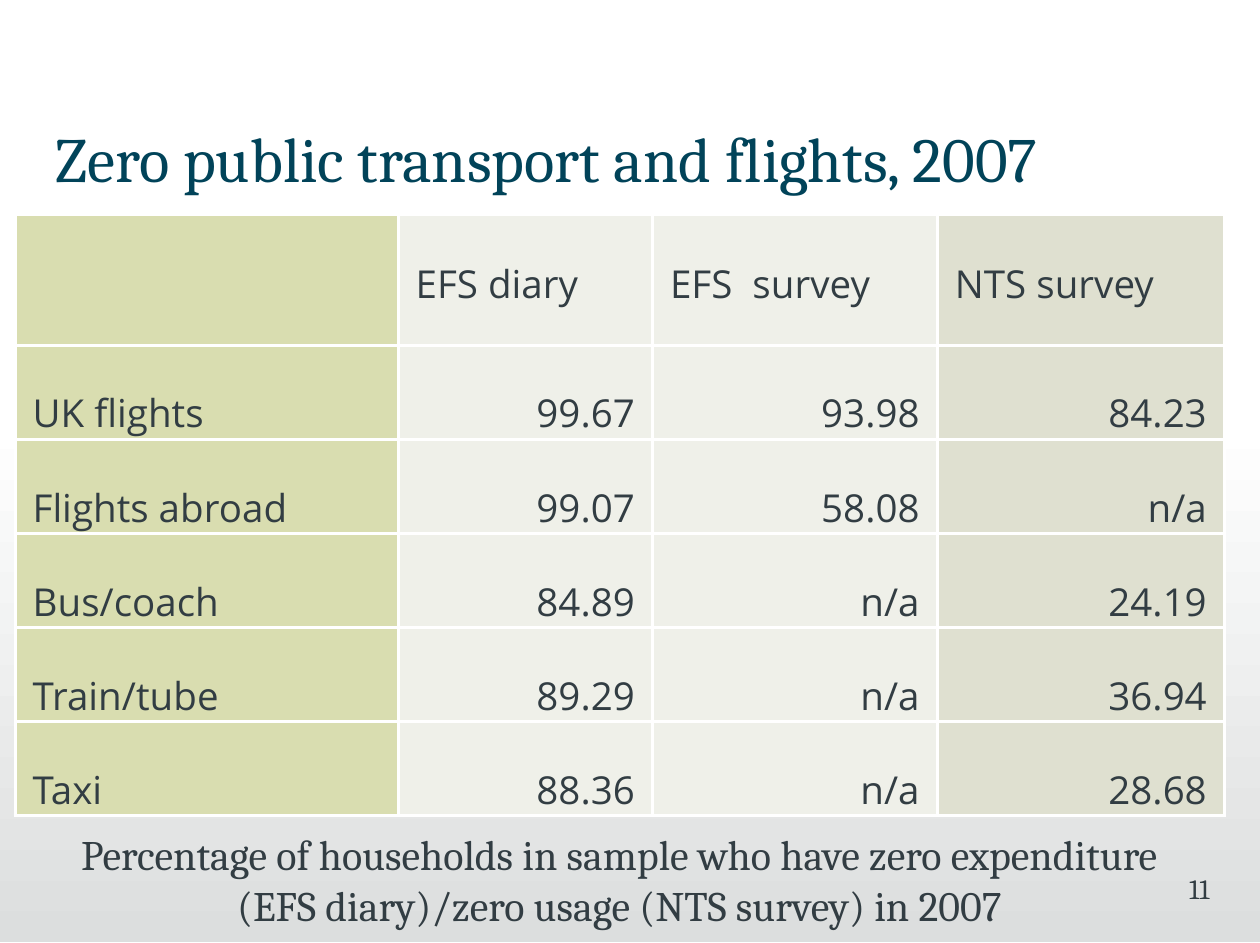
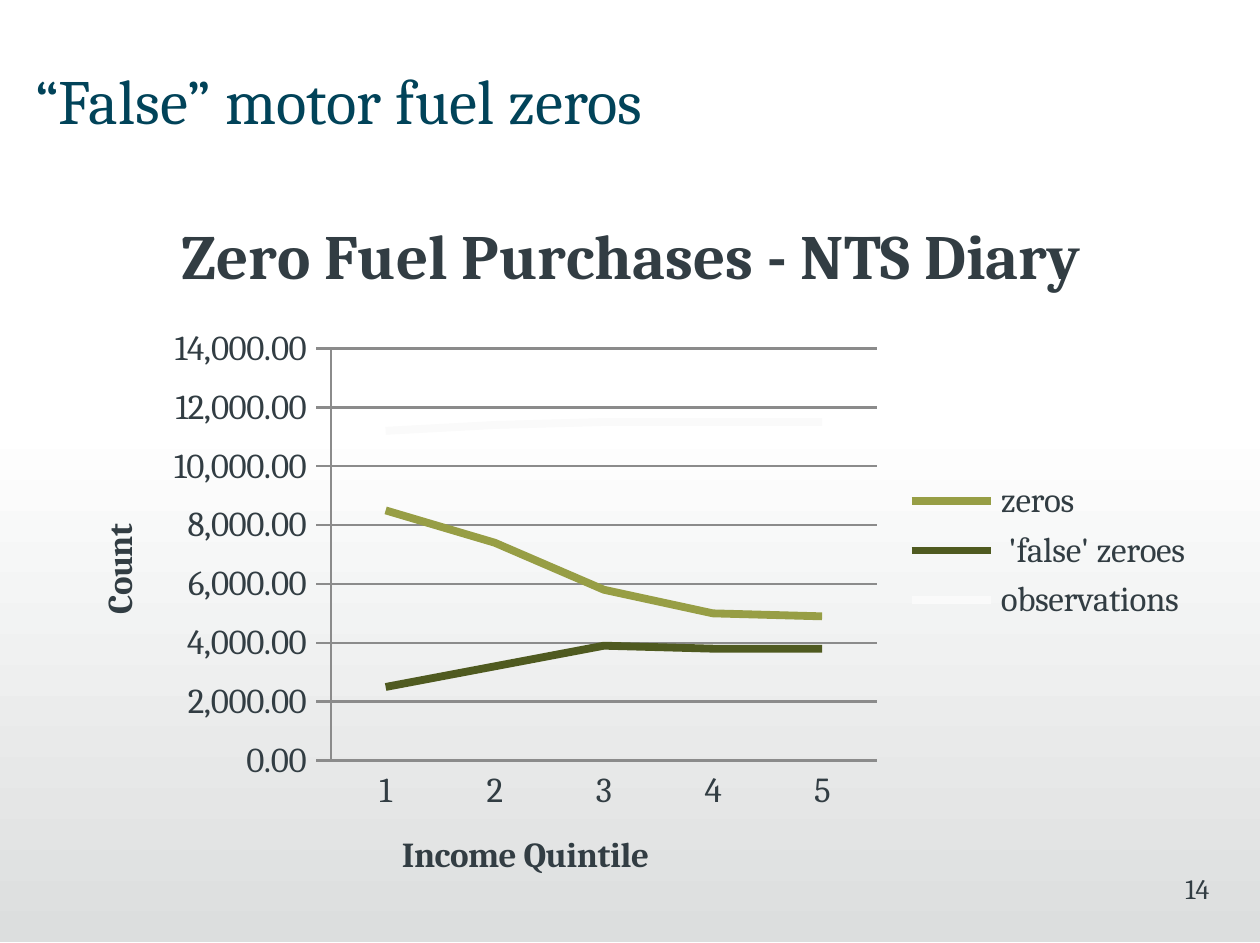
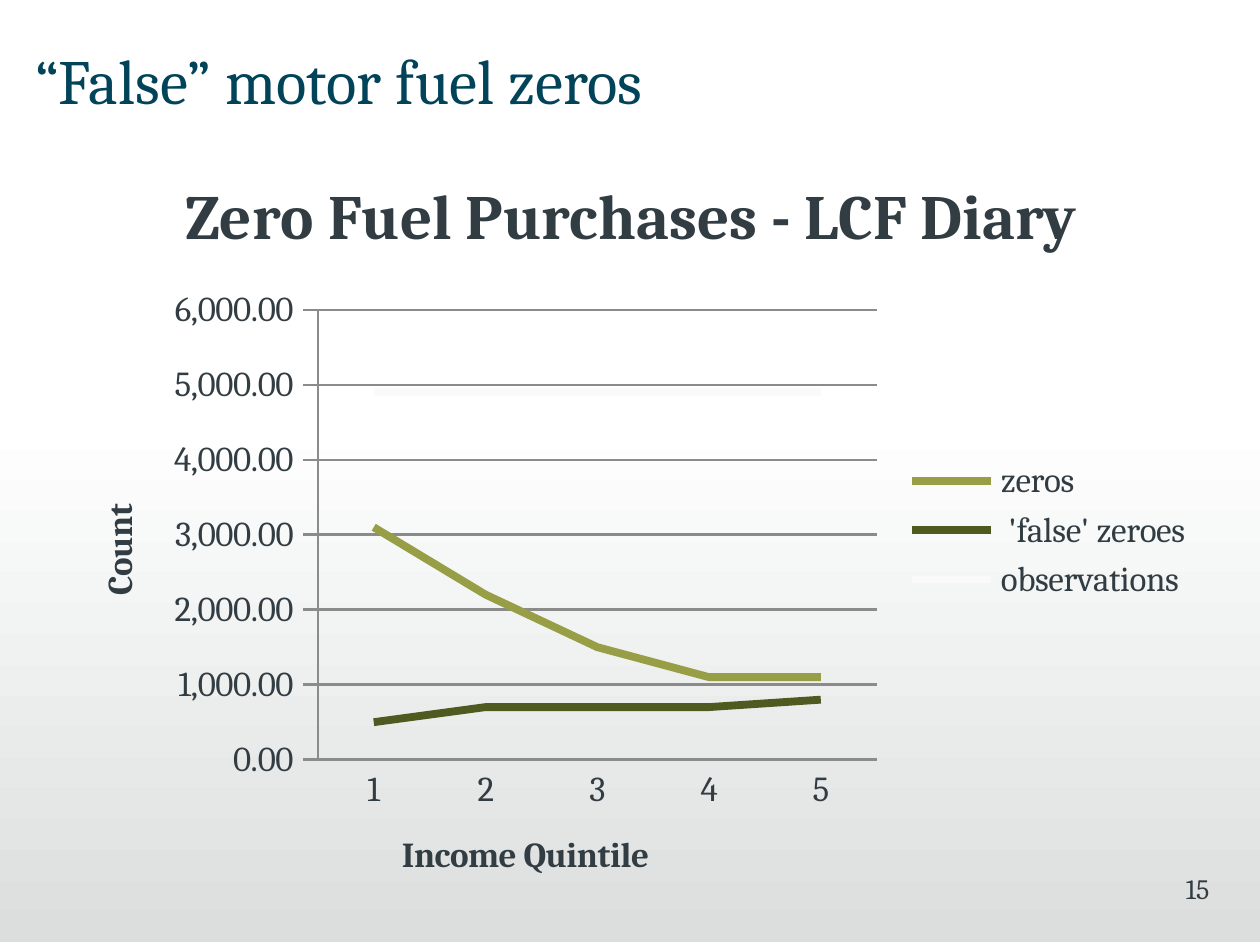
"""Build three slides on zero expenditure in travel surveys."""
from dataclasses import dataclass
from typing import Any, NamedTuple

import pptx
import pptx.chart.data
import pptx.dml.color
import pptx.enum.chart
import pptx.enum.shapes
import pptx.enum.text
import pptx.oxml
import pptx.oxml.ns
import pptx.util
from pptx.util import Inches, Pt

RGB = pptx.dml.color.RGBColor.from_string
ALIGN = pptx.enum.text.PP_ALIGN
ANCHOR = pptx.enum.text.MSO_ANCHOR
TICK = pptx.enum.chart.XL_TICK_MARK


@dataclass(frozen=True)
class Theme:
    """Colours, fonts and type sizes of the deck."""
    serif: str = "Cambria"
    sans: str = "Open Sans"
    title: str = "014359"
    text: str = "323D43"
    white: str = "FFFFFF"
    fade: str = "DCDEDE"
    grid: str = "8B8B8B"
    label_fill: str = "D9DDB0"
    efs_fill: str = "EFF0E9"
    nts_fill: str = "DFE0D0"
    series: tuple[str, ...] = ("979E45", "4F5A20", "FAFAFA")
    title_size: int = 18
    caption_size: int = 12
    table_size: int = 11
    chart_size: int = 10
    number_size: int = 8


T = Theme()


class Box(NamedTuple):
    """Place and size in inches."""
    left: float
    top: float
    width: float
    height: float

    def emu(self) -> list[int]:
        """Return the four lengths for python-pptx."""
        return [Inches(v) for v in self]


class ZeroChart(NamedTuple):
    """One line chart of zero purchases by income quintile."""
    number: str
    title_top: float
    box: Box
    title: str
    top_value: int
    step: int
    values: dict[str, tuple[int, ...]]


SLIDE_WIDTH, SLIDE_HEIGHT = 5, 14.97 / 4

CHARTS = (
    ZeroChart("14", 0.22, Box(0.18, 0.69, 4.65, 2.99), "Zero Fuel Purchases - NTS Diary", 14000, 2000, {
        "zeros": (8500, 7400, 5800, 5000, 4900),
        " 'false' zeroes": (2500, 3200, 3900, 3800, 3800),
        "observations": (11200, 11400, 11500, 11500, 11500),
    }),
    ZeroChart("15", 0.14, Box(0.18, 0.53, 4.65, 3.15), "Zero Fuel Purchases - LCF Diary", 6000, 1000, {
        "zeros": (3100, 2200, 1500, 1100, 1100),
        " 'false' zeroes": (500, 700, 700, 700, 800),
        "observations": (4900, 4900, 4900, 4900, 4900),
    }),
)
QUINTILES = ("1", "2", "3", "4", "5")

USAGE = (
    ("", "EFS diary", "EFS  survey", "NTS survey"),
    ("UK flights", "99.67", "93.98", "84.23"),
    ("Flights abroad", "99.07", "58.08", "n/a"),
    ("Bus/coach", "84.89", "n/a", "24.19"),
    ("Train/tube", "89.29", "n/a", "36.94"),
    ("Taxi", "88.36", "n/a", "28.68"),
)
COL_WIDTHS = (1.52, 1.01, 1.13, 1.14)
COL_FILLS = (T.label_fill, T.efs_fill, T.efs_fill, T.nts_fill)
TABLE_HEIGHT, HEAD_HEIGHT = 2.39, 0.52
ROW_HEIGHT = (TABLE_HEIGHT - HEAD_HEIGHT) / (len(USAGE) - 1)


def set_all(obj: Any, **values: Any) -> None:
    """Set several attributes of an object."""
    for name, value in values.items():
        setattr(obj, name, value)


def set_font(font: Any, size: int, color: str = T.text, name: str = T.serif, bold: bool = False) -> None:
    """Format a font."""
    set_all(font, name=name, size=Pt(size), bold=bold)
    font.color.rgb = RGB(color)


def set_line(line: Any, color: str, width: float) -> None:
    """Format a line."""
    line.color.rgb = RGB(color)
    line.width = Pt(width)


def write(tf: Any, text: str, size: int, align: Any, color: str = T.text,
          insets: tuple[float, ...] = (0, 0.02, 0.05, 0.02), anchor: Any = ANCHOR.TOP) -> None:
    """Put one formatted paragraph into a text frame."""
    left, top, right, bottom = (Inches(v) for v in insets)
    set_all(tf, word_wrap=True, auto_size=pptx.enum.text.MSO_AUTO_SIZE.NONE, vertical_anchor=anchor,
            margin_left=left, margin_top=top, margin_right=right, margin_bottom=bottom)
    p = tf.paragraphs[0]
    p.alignment = align
    r = p.add_run()
    r.text = text
    set_font(r.font, size, color)


def add_base(prs: Any, title: str, number: str, left: float, top: float) -> Any:
    """Add a slide with its title and number."""
    s = prs.slides.add_slide(prs.slide_layouts[5])
    sp = s.shapes.title
    sp.left, sp.top, sp.width, sp.height = Box(left, top, 4.65, 0.35).emu()
    write(sp.text_frame, title, T.title_size, ALIGN.LEFT, T.title, anchor=ANCHOR.MIDDLE)
    sp = s.shapes.add_textbox(*Box(3.76, 3.44, 1.04, 0.25).emu())
    write(sp.text_frame, number, T.number_size, ALIGN.RIGHT, insets=(0.05, 0.02, 0, 0.02))
    return s


def add_fade(prs: Any, s: Any) -> None:
    """Place the fading lower band on the slide master."""
    sp = s.shapes.add_shape(pptx.enum.shapes.MSO_SHAPE.RECTANGLE, *Box(-0.05, 1.66, 5.05, 2.08).emu())
    sp.shadow.inherit = False
    sp.line.fill.background()
    sp.fill.gradient()
    sp.fill.gradient_angle = 270
    for stop, color in zip(sp.fill.gradient_stops, (T.white, T.fade)):
        stop.color.rgb = RGB(color)
    prs.slide_master.element.cSld.spTree.insert(2, sp.element)


def border_cell(cell: Any) -> None:
    """Draw white lines on the four sides of a cell."""
    props = cell._tc.get_or_add_tcPr()
    for i, side in enumerate(("lnL", "lnR", "lnT", "lnB")):
        props.insert(i, pptx.oxml.parse_xml(
            f'<a:{side} {pptx.oxml.ns.nsdecls("a")} w="{Pt(1)}"><a:solidFill>'
            f'<a:srgbClr val="{T.white}"/></a:solidFill></a:{side}>'))


def add_usage_table(s: Any) -> None:
    """Add the table of zero shares."""
    box = Box(0.06, 0.85, sum(COL_WIDTHS), TABLE_HEIGHT)
    table = s.shapes.add_table(len(USAGE), len(COL_WIDTHS), *box.emu()).table
    set_all(table, first_row=False, horz_banding=False)
    for col, width in zip(table.columns, COL_WIDTHS):
        col.width = Inches(width)
    for i, row in enumerate(USAGE):
        table.rows[i].height = Inches(ROW_HEIGHT if i else HEAD_HEIGHT)
        for j, text in enumerate(row):
            cell = table.cell(i, j)
            set_all(cell, text=text, margin_left=Inches(0.07), margin_right=Inches(0.07), margin_top=0,
                    margin_bottom=0, vertical_anchor=ANCHOR.BOTTOM if i else ANCHOR.MIDDLE)
            cell.fill.solid()
            cell.fill.fore_color.rgb = RGB(COL_FILLS[j])
            border_cell(cell)
            p = cell.text_frame.paragraphs[0]
            set_all(p, alignment=ALIGN.RIGHT if i and j else ALIGN.LEFT, line_spacing=1.15)
            for r in p.runs:
                set_font(r.font, T.table_size, name=T.sans)


def set_heading(owner: Any, heading: Any, text: str, size: int) -> None:
    """Write a bold heading of a chart or axis."""
    owner.has_title = True
    heading.text_frame.text = text
    set_font(heading.text_frame.paragraphs[0].runs[0].font, size, bold=True)


def add_zero_chart(s: Any, item: ZeroChart) -> None:
    """Add the line chart of one diary."""
    data = pptx.chart.data.CategoryChartData(number_format="#,##0.00")
    data.categories = QUINTILES
    for name, values in item.values.items():
        data.add_series(name, values)
    chart = s.shapes.add_chart(pptx.enum.chart.XL_CHART_TYPE.LINE, *item.box.emu(), data).chart
    set_font(chart.font, T.chart_size)
    set_heading(chart, chart.chart_title, item.title, T.title_size)
    chart.chart_title.include_in_layout = False
    chart.has_legend = True
    set_all(chart.legend, position=pptx.enum.chart.XL_LEGEND_POSITION.RIGHT, include_in_layout=False)
    set_font(chart.legend.font, T.chart_size)
    chart.plots[0].vary_by_categories = False
    for series, color in zip(chart.plots[0].series, T.series):
        series.smooth = False
        series.marker.style = pptx.enum.chart.XL_MARKER_STYLE.NONE
        set_line(series.format.line, color, 2.25)
    axes = ((chart.category_axis, "Income Quintile", TICK.NONE), (chart.value_axis, "Count", TICK.OUTSIDE))
    for axis, text, tick in axes:
        set_heading(axis, axis.axis_title, text, T.chart_size)
        set_all(axis, major_tick_mark=tick, minor_tick_mark=TICK.NONE)
        set_font(axis.tick_labels.font, T.chart_size)
        set_line(axis.format.line, T.grid, 0.75)
    axis = chart.value_axis
    set_all(axis, minimum_scale=0, maximum_scale=item.top_value, major_unit=item.step, has_major_gridlines=True)
    set_all(axis.tick_labels, number_format="#,##0.00", number_format_is_linked=False)
    set_line(axis.major_gridlines.format.line, T.grid, 0.75)


def main() -> None:
    """Build and save the deck."""
    prs = pptx.Presentation()
    set_all(prs, slide_width=Inches(SLIDE_WIDTH), slide_height=Inches(SLIDE_HEIGHT))
    s = add_base(prs, "Zero public transport and flights, 2007", "11", 0.22, 0.45)
    add_fade(prs, s)
    sp = s.shapes.add_textbox(*Box(0.06, 3.24, 4.8, 0.5).emu())
    write(sp.text_frame, "Percentage of households in sample who have zero expenditure "
          "(EFS diary)/zero usage (NTS survey) in 2007", T.caption_size, ALIGN.CENTER,
          insets=(0.1, 0.05, 0.1, 0.05))
    add_usage_table(s)
    for item in CHARTS:
        s = add_base(prs, "“False” motor fuel zeros", item.number, 0.14, item.title_top)
        add_zero_chart(s, item)
    prs.save("out.pptx")


if __name__ == "__main__":
    main()
